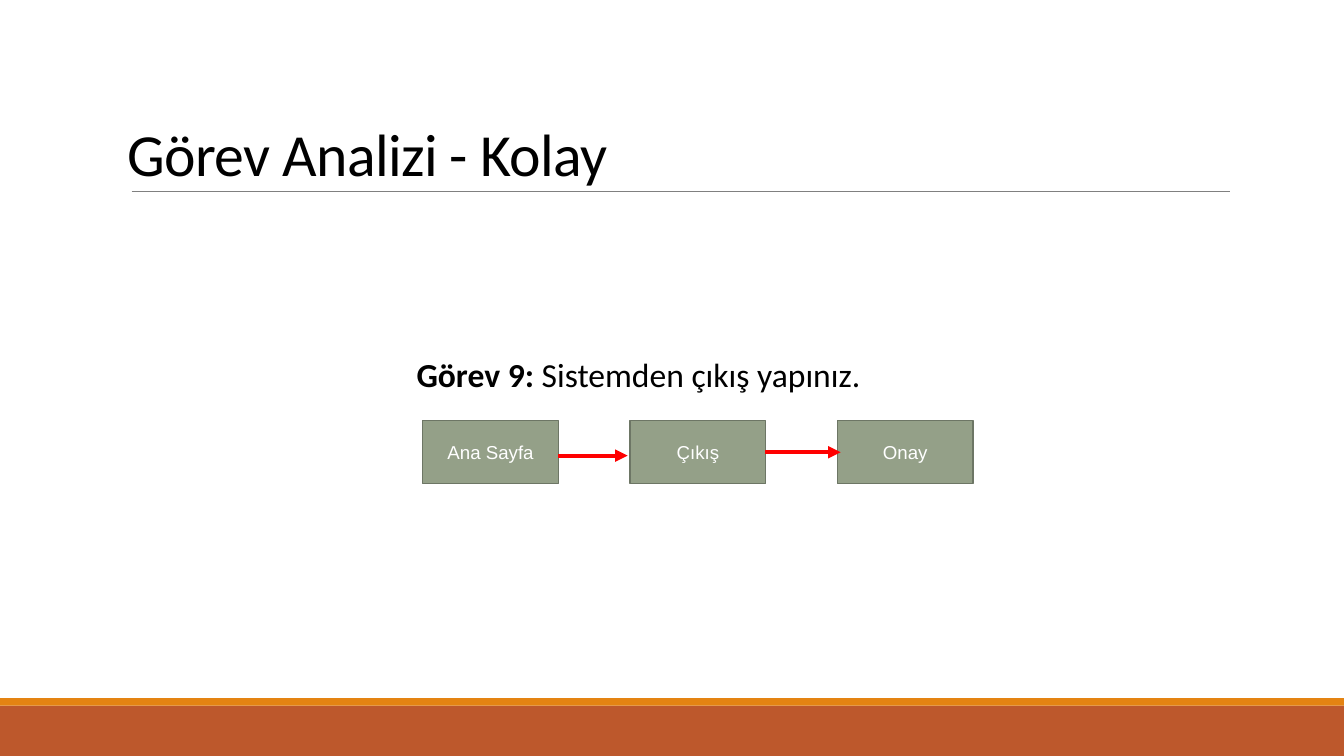
import pptx
import pptx.util
import pptx.dml.color
import pptx.enum.shapes
import pptx.enum.text
import pptx.oxml.ns
import lxml.etree

Inches, Pt = pptx.util.Inches, pptx.util.Pt
RGBColor = pptx.dml.color.RGBColor
RECT = pptx.enum.shapes.MSO_SHAPE.RECTANGLE
LINE = pptx.enum.shapes.MSO_CONNECTOR.STRAIGHT
ANCHOR = pptx.enum.text.MSO_ANCHOR
qn = pptx.oxml.ns.qn

RUST = RGBColor(0xBD, 0x58, 0x2C)
ORANGE = RGBColor(0xE4, 0x83, 0x12)
GRAY = RGBColor(0x80, 0x80, 0x80)
SAGE = RGBColor(0x94, 0xA0, 0x88)
MOSS = RGBColor(0x6D, 0x76, 0x65)
RED = RGBColor(0xFF, 0, 0)
BLACK = RGBColor(0, 0, 0)
WHITE = RGBColor(0xFF, 0xFF, 0xFF)

deck = pptx.Presentation()
deck.slide_width, deck.slide_height = Inches(20), Inches(11.25)
slide = deck.slides.add_slide(deck.slide_layouts[6])
shapes = slide.shapes


def add_rule(left, right, y, color, width):
    rule = shapes.add_connector(LINE, Inches(left), Inches(y), Inches(right), Inches(y))
    rule.line.color.rgb = color
    rule.line.width = Pt(width)
    lxml.etree.SubElement(rule._element.spPr, qn("a:effectLst"))
    return rule


def style_run(run, name, size, color):
    run.font.name = name
    run.font.size = Pt(size)
    run.font.color.rgb = color


# Footer bands
for top, height, color in [(10.5, 0.75, RUST), (10.39, 0.11, ORANGE)]:
    band = shapes.add_shape(RECT, 0, Inches(top), Inches(20), Inches(height))
    band.shadow.inherit = False
    band.fill.solid()
    band.fill.fore_color.rgb = color
    band.line.fill.background()

# Title and its rule
add_rule(1.96, 18.31, 2.85, GRAY, 0.5)
title = shapes.add_textbox(Inches(1.8), Inches(0.47), Inches(16.5), Inches(2.38))
frame = title.text_frame
frame.word_wrap = True
frame.vertical_anchor = ANCHOR.BOTTOM
frame.text = "Görev Analizi - Kolay"
frame.paragraphs[0].line_spacing = 0.85
run = frame.paragraphs[0].runs[0]
style_run(run, "Calibri", 64, BLACK)
run._r.get_or_add_rPr().set("spc", "-70")

# Task steps
for index, label in enumerate(["Ana Sayfa", "Çıkış", "Onay"]):
    left = 6.29 + index * 3.085
    box = shapes.add_shape(RECT, Inches(left), Inches(6.26), Inches(2.02), Inches(0.94))
    box.shadow.inherit = False
    box.fill.solid()
    box.fill.fore_color.rgb = SAGE
    box.line.color.rgb = MOSS
    box.line.width = Pt(1.25)
    frame = box.text_frame
    frame.vertical_anchor = ANCHOR.MIDDLE
    frame.text = label
    frame.paragraphs[0].alignment = pptx.enum.text.PP_ALIGN.CENTER
    style_run(frame.paragraphs[0].runs[0], "Arial", 20, WHITE)

# Arrows between the steps
for left, right, y in [(8.31, 9.34, 6.78), (11.39, 12.51, 6.73)]:
    arrow = add_rule(left, right, y, RED, 4.5)
    edge = arrow._element.spPr.find(qn("a:ln"))
    lxml.etree.SubElement(edge, qn("a:tailEnd"), type="triangle")

# Task statement
task = shapes.add_textbox(Inches(6.1), Inches(5.22), Inches(8.22), Inches(0.4))
frame = task.text_frame
frame.word_wrap = True
for text, bold in [("Görev 9:", True), (" Sistemden çıkış yapınız.", False)]:
    run = frame.paragraphs[0].add_run()
    run.text = text
    run.font.bold = bold
    style_run(run, "Calibri", 36, BLACK)

deck.save("out.pptx")
